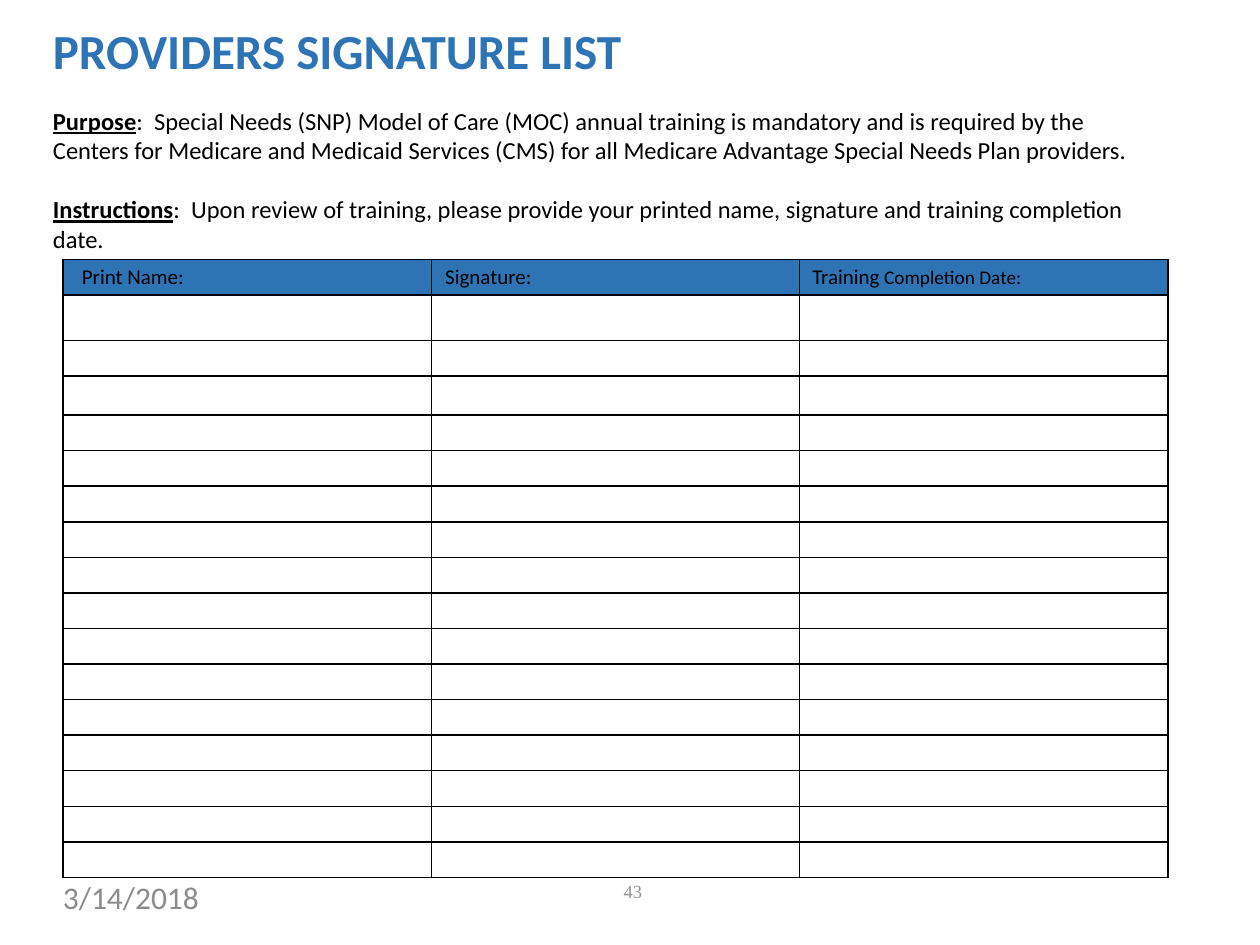
"""Build the providers signature list slide."""
from lxml import etree
from pptx import Presentation
from pptx.dml.color import RGBColor
from pptx.enum.text import MSO_ANCHOR, MSO_AUTO_SIZE, PP_ALIGN
from pptx.oxml.ns import qn
from pptx.util import Inches, Pt

TOP, MIDDLE = MSO_ANCHOR.TOP, MSO_ANCHOR.MIDDLE
FIXED = MSO_AUTO_SIZE.NONE
LEFT = PP_ALIGN.LEFT
BLUE = RGBColor(0x2E, 0x74, 0xB5)
BLACK = RGBColor(0, 0, 0)
WHITE = RGBColor(255, 255, 255)
GRAY = RGBColor(0x8C, 0x8C, 0x8C)
SILVER = RGBColor(0x93, 0x95, 0x98)


def style(run, size, color, name="Calibri", bold=False):
    font = run.font
    font.size, font.name, font.bold = Pt(size), name, bold
    font.color.rgb = color


def edge(cell):
    props = cell._tc.get_or_add_tcPr()
    for spot, side in enumerate(("lnL", "lnR", "lnT", "lnB")):
        line = etree.Element(qn(f"a:{side}"), w=str(Pt(1)))
        fill = etree.SubElement(line, qn("a:solidFill"))
        etree.SubElement(fill, qn("a:srgbClr"), val=str(BLACK))
        props.insert(spot, line)


prs = Presentation()
prs.slide_width, prs.slide_height = Inches(10), Inches(7.5)
slide = prs.slides.add_slide(prs.slide_layouts[1])
title, body = slide.placeholders

for shape, top, height in ((title, 0.11, 0.6), (body, 0.79, 1.27)):
    shape.left, shape.top = Inches(0.32), Inches(top)
    shape.width, shape.height = Inches(8.94), Inches(height)
    shape.text_frame.auto_size = FIXED
    shape.text_frame.vertical_anchor = TOP

title.text_frame.text = "PROVIDERS SIGNATURE LIST"
para = title.text_frame.paragraphs[0]
para.alignment = LEFT
style(para.runs[0], 28, BLUE, bold=True)

NOTES = (
    ("Purpose", ":  Special Needs (SNP) Model of Care (MOC) annual training is "
     "mandatory and is required by the Centers for Medicare and Medicaid Services "
     "(CMS) for all Medicare Advantage Special Needs Plan providers.", 0),
    ("Instructions", ":  Upon review of training, please provide your printed name, "
     "signature and training completion date.", 17),
)
frame = body.text_frame
for index, (label, text, gap) in enumerate(NOTES):
    para = frame.add_paragraph() if index else frame.paragraphs[0]
    para.space_before = Pt(gap)
    props = para._p.get_or_add_pPr()
    props.set("marL", "0")
    props.set("indent", "0")
    etree.SubElement(props, qn("a:buNone"))
    for part in (label, text):
        run = para.add_run()
        run.text = part
        style(run, 14, BLACK, bold=part == label)
        run.font.underline = part == label

ROWS, COLS = 17, 3
TALL = {1: 0.36, 3: 0.31}
WIDE, HIGH = 8.77, 4.91
step = (HIGH - sum(TALL.values())) / (ROWS - len(TALL))
HEADS = (
    (0.15, (("Print Name:", 12),)),
    (0.11, (("Signature:", 12),)),
    (0.1, (("Training", 12), (" Completion Date:", 11))),
)
table = slide.shapes.add_table(
    ROWS, COLS, Inches(0.5), Inches(2.06), Inches(WIDE), Inches(HIGH)).table
for col in table.columns:
    col.width = Inches(WIDE / COLS)
for index, row in enumerate(table.rows):
    row.height = Inches(TALL.get(index, step))
    for cell in row.cells:
        cell.margin_left = cell.margin_right = 0
        cell.margin_top = cell.margin_bottom = 0
        cell.vertical_anchor = MIDDLE
        cell.fill.solid()
        cell.fill.fore_color.rgb = WHITE if index else BLUE
        edge(cell)
        if index:
            end = cell.text_frame.paragraphs[0]._p.get_or_add_endParaRPr()
            end.set("sz", "1000")
for cell, (inset, parts) in zip(table.rows[0].cells, HEADS):
    cell.margin_left = Inches(inset)
    for text, size in parts:
        run = cell.text_frame.paragraphs[0].add_run()
        run.text = text
        style(run, size, BLACK)

FOOT = (
    ("3/14/2018", 0.5, 6.97, 2.3, 0.3, 18, GRAY, "Calibri"),
    ("43", 4.95, 6.98, 0.21, 0.18, 10.6, SILVER, "Times New Roman"),
)
for text, left, top, width, height, size, color, name in FOOT:
    box = slide.shapes.add_textbox(
        Inches(left), Inches(top), Inches(width), Inches(height))
    frame = box.text_frame
    frame.word_wrap = True
    frame.margin_left = frame.margin_right = 0
    frame.margin_top = frame.margin_bottom = 0
    frame.text = text
    style(frame.paragraphs[0].runs[0], size, color, name)

prs.save("out.pptx")
